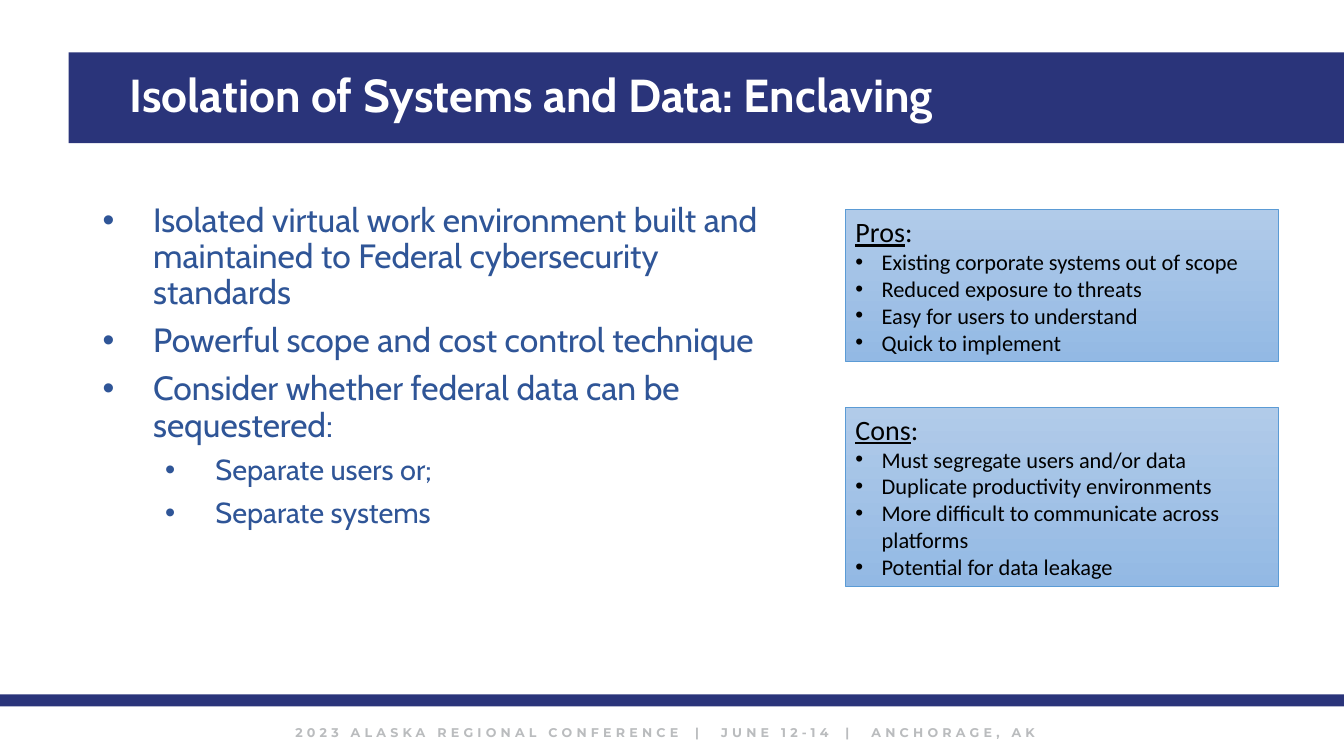
import pptx
import pptx.util
import pptx.dml.color
import pptx.enum.shapes
import pptx.enum.text
import pptx.oxml.ns
from lxml import etree
from pptx.util import Cm, Pt

COLORS = {
    "navy": "2A347A",
    "blue": "2F5597",
    "white": "FFFFFF",
    "black": "000000",
    "gray": "BABCBE",
    "panel_top": "B1CBE9",
    "panel_bottom": "93B9E4",
    "panel_line": "5B9BD5",
}
RGB = {name: pptx.dml.color.RGBColor.from_string(value) for name, value in COLORS.items()}


def add_run(paragraph, text, font, size, color, bold=False):
    run = paragraph.add_run()
    run.text = text
    run.font.name = font
    run.font.size = Pt(size)
    run.font.color.rgb = RGB[color]
    run.font.bold = bold
    return run


def add_bullet(paragraph, left, hanging):
    """Give the paragraph a round bullet; text starts at left, the bullet hanging before it."""
    properties = paragraph._p.get_or_add_pPr()
    properties.set("marL", str(left))
    properties.set("indent", str(-hanging))
    font = etree.SubElement(properties, pptx.oxml.ns.qn("a:buFont"))
    font.set("typeface", "Arial")
    etree.SubElement(properties, pptx.oxml.ns.qn("a:buChar")).set("char", "•")


presentation = pptx.Presentation()
presentation.slide_width = Cm(33.87)
presentation.slide_height = Cm(19.05)
slide = presentation.slides.add_slide(presentation.slide_layouts[6])
RECTANGLE = pptx.enum.shapes.MSO_SHAPE.RECTANGLE

# Title band and footer strip
for left, top, width, height in [(1.73, 1.32, 32.14, 2.29), (0, 17.5, 33.87, 0.3)]:
    band = slide.shapes.add_shape(RECTANGLE, Cm(left), Cm(top), Cm(width), Cm(height))
    band.shadow.inherit = False
    band.fill.solid()
    band.fill.fore_color.rgb = RGB["navy"]
    band.line.fill.background()

# Footer, with wider letter spacing around the separators
footer = slide.shapes.add_textbox(Cm(1.09), Cm(18.14), Cm(31.34), Cm(0.64))
footer.text_frame.word_wrap = True
paragraph = footer.text_frame.paragraphs[0]
paragraph.alignment = pptx.enum.text.PP_ALIGN.CENTER
for text, spacing in [
    ("2023 ALASKA REGIONAL CONFERENCE", 300),
    (" | ", 660),
    ("JUNE 12-14", 300),
    (" | ", 660),
    ("ANCHORAGE, AK", 300),
]:
    run = add_run(paragraph, text, "Montserrat", 9, "gray", bold=True)
    run.font._element.set("spc", str(spacing))

# Title
title = slide.shapes.add_textbox(Cm(3.02), Cm(1.8), Cm(27.81), Cm(1.3))
title.text_frame.word_wrap = True
title.text_frame.vertical_anchor = pptx.enum.text.MSO_ANCHOR.MIDDLE
paragraph = title.text_frame.paragraphs[0]
paragraph.line_spacing = 0.9
add_run(paragraph, "Isolation of Systems and Data: Enclaving", "Cabin", 33, "white", bold=True)

# Main points
body = slide.shapes.add_textbox(Cm(2.34), Cm(5), Cm(17.27), Cm(12.09))
body.text_frame.word_wrap = True
points = [
    (0, "Isolated virtual work environment built and maintained to Federal cybersecurity standards"),
    (0, "Powerful scope and cost control technique"),
    (0, "Consider whether federal data can be sequestered:"),
    (1, "Separate users or;"),
    (1, "Separate systems"),
]
for index, (level, text) in enumerate(points):
    paragraph = body.text_frame.add_paragraph() if index else body.text_frame.paragraphs[0]
    paragraph.level = level
    paragraph.line_spacing = 0.9
    paragraph.space_before = Pt(8.3 if index else 0)
    add_bullet(paragraph, Cm((1.27, 2.84)[level]), Cm(1.27))
    add_run(paragraph, text, "Cabin", (24, 20.7)[level], "blue")

# Pros and cons panels
panels = [
    ("Pros", 5.28, 3.84, [
        "Existing corporate systems out of scope",
        "Reduced exposure to threats",
        "Easy for users to understand",
        "Quick to implement",
    ]),
    ("Cons", 10.26, 4.52, [
        "Must segregate users and/or data",
        "Duplicate productivity environments",
        "More difficult to communicate across platforms",
        "Potential for data leakage",
    ]),
]
for heading, top, height, items in panels:
    panel = slide.shapes.add_shape(RECTANGLE, Cm(21.31), Cm(top), Cm(10.9), Cm(height))
    panel.shadow.inherit = False
    panel.fill.gradient()
    panel.fill.gradient_angle = 270
    for stop, color in zip(panel.fill.gradient_stops, ("panel_top", "panel_bottom")):
        stop.color.rgb = RGB[color]
    panel.line.color.rgb = RGB["panel_line"]
    panel.line.width = Pt(0.5)
    frame = panel.text_frame
    frame.word_wrap = True
    frame.vertical_anchor = pptx.enum.text.MSO_ANCHOR.TOP
    paragraph = frame.paragraphs[0]
    paragraph.alignment = pptx.enum.text.PP_ALIGN.LEFT
    add_run(paragraph, heading, "Calibri", 20, "black").font.underline = True
    add_run(paragraph, ":", "Calibri", 20, "black")
    for item in items:
        paragraph = frame.add_paragraph()
        paragraph.alignment = pptx.enum.text.PP_ALIGN.LEFT
        add_bullet(paragraph, Cm(0.66), Cm(0.66))
        add_run(paragraph, item, "Calibri", 16, "black")

presentation.save("out.pptx")
